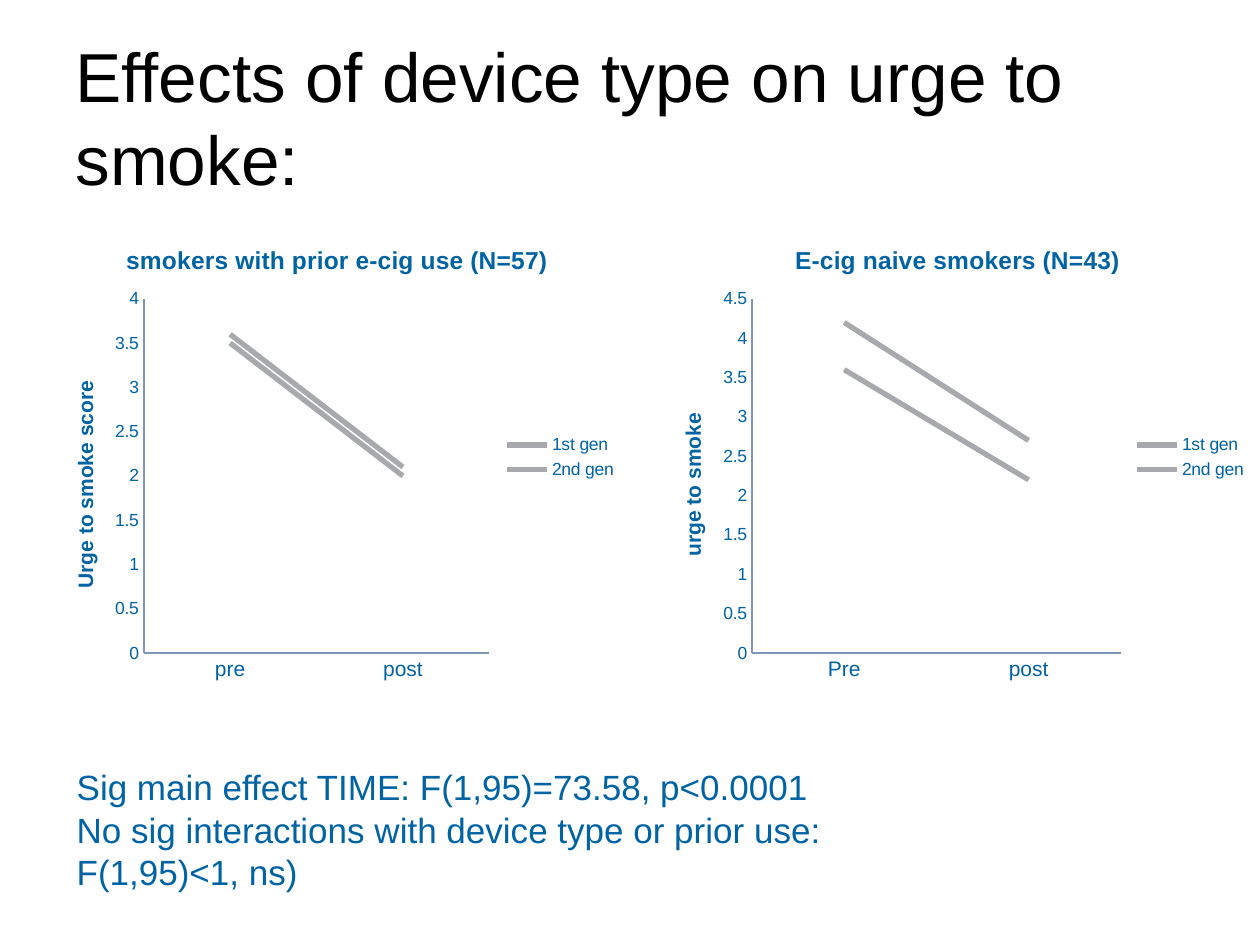
from lxml import etree
from pptx import Presentation
from pptx.chart.data import CategoryChartData
from pptx.dml.color import RGBColor
from pptx.enum.chart import XL_CHART_TYPE, XL_LEGEND_POSITION, XL_MARKER_STYLE, XL_TICK_MARK
from pptx.enum.text import MSO_ANCHOR, PP_ALIGN
from pptx.oxml.ns import qn
from pptx.util import Inches, Pt

BLACK = RGBColor(0x00, 0x00, 0x00)
BLUE = RGBColor(0x00, 0x63, 0xA4)
AXIS_BLUE = RGBColor(0x80, 0x96, 0xB8)
GREY = RGBColor(0xA7, 0xA9, 0xAC)


def style_font(font, size, color=BLUE, bold=False):
    font.name = "Arial"
    font.size = Pt(size)
    font.bold = bold
    font.color.rgb = color


def write_text(frame, *lines, anchor=MSO_ANCHOR.TOP, **font_format):
    frame.word_wrap = True
    frame.vertical_anchor = anchor
    for number, line in enumerate(lines):
        paragraph = frame.add_paragraph() if number else frame.paragraphs[0]
        paragraph.text = line
        paragraph.alignment = PP_ALIGN.LEFT
        style_font(paragraph.font, **font_format)


def place_plot(chart, **fractions):
    """Fix the inner plot area as fractions (x, y, w, h) of the chart."""
    plot_area = chart.plots[0]._element.getparent()
    for old_layout in plot_area.findall(qn("c:layout")):
        plot_area.remove(old_layout)
    layout = etree.Element(qn("c:layout"))
    manual = etree.SubElement(layout, qn("c:manualLayout"))
    settings = {"layoutTarget": "inner", "xMode": "edge", "yMode": "edge", **fractions}
    for name, value in settings.items():
        etree.SubElement(manual, qn(f"c:{name}")).set("val", str(value))
    plot_area.insert(0, layout)


class SlideBuilder:
    def __init__(self, presentation):
        self.slide = presentation.slides.add_slide(presentation.slide_layouts[5])

    def title(self, text, box):
        title = self.slide.shapes.title
        title.left, title.top, title.width, title.height = map(Inches, box)
        write_text(title.text_frame, text, anchor=MSO_ANCHOR.MIDDLE, size=39.6, color=BLACK)

    def text(self, box, *lines):
        shape = self.slide.shapes.add_textbox(*map(Inches, box))
        write_text(shape.text_frame, *lines, size=20)

    def line_chart(self, box, title, axis_title, categories, series, maximum, plot_x, plot_width):
        data = CategoryChartData()
        data.categories = categories
        for name, values in series.items():
            data.add_series(name, values)
        chart = self.slide.shapes.add_chart(XL_CHART_TYPE.LINE, *map(Inches, box), data).chart
        style_font(chart.font, 10)
        chart.has_title = True
        write_text(chart.chart_title.text_frame, title, size=14, bold=True)
        chart.has_legend = True
        chart.legend.position = XL_LEGEND_POSITION.RIGHT
        chart.legend.include_in_layout = False
        chart.plots[0].vary_by_categories = False

        value_axis = chart.value_axis
        value_axis.minimum_scale, value_axis.maximum_scale = 0, maximum
        value_axis.major_unit = 0.5
        value_axis.has_major_gridlines = False
        value_axis.tick_labels.number_format = "General"
        value_axis.tick_labels.number_format_is_linked = False
        write_text(value_axis.axis_title.text_frame, axis_title, size=12, bold=True)
        style_font(chart.category_axis.tick_labels.font, 12)
        for axis in (value_axis, chart.category_axis):
            axis.major_tick_mark = axis.minor_tick_mark = XL_TICK_MARK.NONE
            axis.format.line.color.rgb = AXIS_BLUE
            axis.format.line.width = Pt(1)

        for line in chart.plots[0].series:
            line.smooth = False
            line.marker.style = XL_MARKER_STYLE.NONE
            line.format.line.color.rgb = GREY
            line.format.line.width = Pt(3)
        place_plot(chart, x=plot_x, y=0.16, w=plot_width, h=0.76)


def main():
    presentation = Presentation()
    presentation.slide_width, presentation.slide_height = Inches(10), Inches(7.5)
    builder = SlideBuilder(presentation)
    builder.title("Effects of device type on urge to smoke:", (0.5, 0.3, 9, 1.25))
    builder.line_chart(
        (5.2, 1.78, 4.8, 3.7), "E-cig naive smokers (N=43)", "urge to smoke",
        ["Pre", "post"], {"1st gen": (3.6, 2.2), "2nd gen": (4.2, 2.7)},
        maximum=4.5, plot_x=0.16, plot_width=0.61)
    builder.line_chart(
        (0.35, 1.78, 4.65, 3.7), "smokers with prior e-cig use (N=57)", "Urge to smoke score",
        ["pre", "post"], {"1st gen": (3.5, 2), "2nd gen": (3.6, 2.1)},
        maximum=4, plot_x=0.17, plot_width=0.59)
    builder.text(
        (0.51, 6.03, 6.22, 1.11),
        "Sig main effect TIME: F(1,95)=73.58, p<0.0001",
        "No sig interactions with device type or prior use: F(1,95)<1, ns)")
    presentation.save("out.pptx")


if __name__ == "__main__":
    main()
